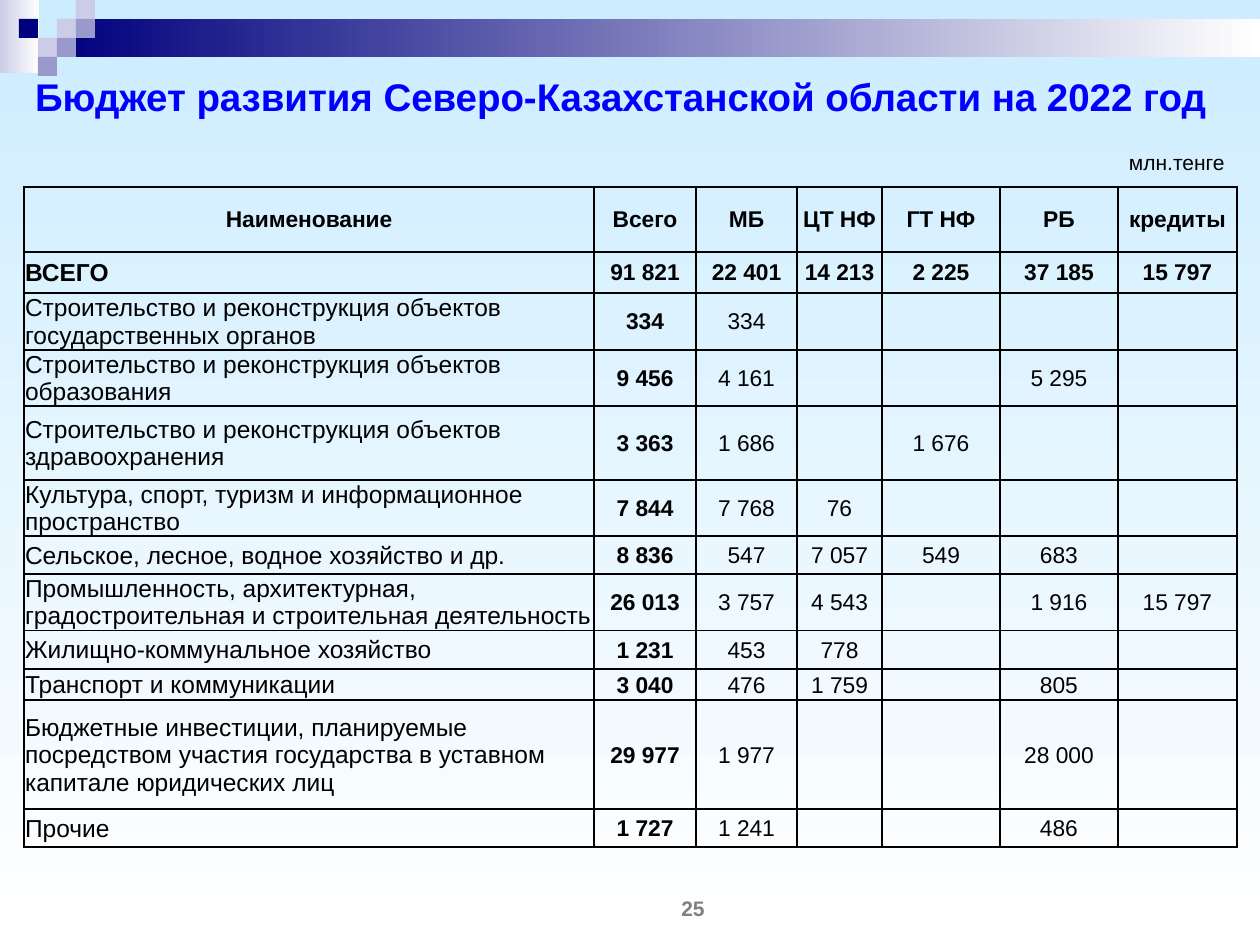
from lxml import etree
from pptx import Presentation
from pptx import util as u
from pptx.dml.color import RGBColor
from pptx.enum import shapes, text
from pptx.oxml import ns

SCALE = 914400 / 126
INK = {
    "sky": "CCECFF", "white": "FFFFFF", "navy": "00007D", "pale": "CCCCE6",
    "mid": "9999CC", "blue": "0000FF", "black": "000000", "gray": "7F7F7F",
}
ALIGN = {"l": text.PP_ALIGN.LEFT, "c": text.PP_ALIGN.CENTER, "r": text.PP_ALIGN.RIGHT}
COLS = [570, 102, 101, 85, 118, 118, 119]
HEAD = ["Наименование", "Всего", "МБ", "ЦТ НФ", "ГТ НФ", "РБ", "кредиты"]
ROWS = [
    (65, HEAD),
    (41, ["ВСЕГО", "91 821", "22 401", "14 213", "2 225", "37 185", "15 797"]),
    (57, ["Строительство и реконструкция объектов государственных органов",
          "334", "334", "", "", "", ""]),
    (56, ["Строительство и реконструкция объектов образования",
          "9 456", "4 161", "", "", "5 295", ""]),
    (74, ["Строительство и реконструкция объектов здравоохранения",
          "3 363", "1 686", "", "1 676", "", ""]),
    (56, ["Культура, спорт, туризм и информационное пространство",
          "7 844", "7 768", "76", "", "", ""]),
    (38, ["Сельское, лесное, водное хозяйство и др.",
          "8 836", "547", "7 057", "549", "683", ""]),
    (56, ["Промышленность, архитектурная, градостроительная и строительная деятельность",
          "26 013", "3 757", "4 543", "", "1 916", "15 797"]),
    (39, ["Жилищно-коммунальное хозяйство", "1 231", "453", "778", "", "", ""]),
    (31, ["Транспорт и коммуникации", "3 040", "476", "1 759", "", "805", ""]),
    (109, ["Бюджетные инвестиции, планируемые посредством участия государства "
           "в уставном капитале юридических лиц",
           "29 977", "1 977", "", "", "28 000", ""]),
    (38, ["Прочие", "1 727", "1 241", "", "", "486", ""]),
]


def px(n):
    return u.Emu(round(n * SCALE))


def rgb(name):
    return RGBColor.from_string(INK[name])


def blend(fill, first, last, angle):
    fill.gradient()
    fill.gradient_angle = angle
    for stop, name in zip(fill.gradient_stops, (first, last)):
        stop.color.rgb = rgb(name)


def write(frame, words, size=12, bold=False, ink="black", align="c"):
    frame.word_wrap = True
    para = frame.paragraphs[0]
    para.alignment = ALIGN[align]
    if not words:
        etree.SubElement(para._p, ns.qn("a:endParaRPr"), sz=str(size * 100))
        return
    run = para.add_run()
    run.text = words
    font = run.font
    font.name, font.size, font.bold = "Arial", u.Pt(size), bold
    font.color.rgb = rgb(ink)


def block(slide, x, y, w, h, ink, fade=None):
    shape = slide.shapes.add_shape(shapes.MSO_SHAPE.RECTANGLE, px(x), px(y), px(w), px(h))
    shape.shadow.inherit = False
    shape.line.fill.background()
    if fade:
        blend(shape.fill, ink, fade, 0)
    else:
        shape.fill.solid()
        shape.fill.fore_color.rgb = rgb(ink)


def banner(slide, x, y, w):
    side = 19
    block(slide, x, y, 39, 73, "pale", "white")
    block(slide, x + 3 * side, y + side, w - 3 * side, 2 * side, "navy", "white")
    tiles = [(3, 1, "pale"), (4, 0, "pale"), (4, 1, "mid"), (2, 2, "pale"),
             (1, 1, "navy"), (3, 2, "mid"), (2, 3, "mid")]
    for col, row, ink in tiles:
        block(slide, x + col * side, y + row * side, side, side, ink)


def title(slide, x, y, w, h):
    shape = slide.shapes.title
    shape.left, shape.top, shape.width, shape.height = px(x), px(y), px(w), px(h)
    shape.text_frame.vertical_anchor = text.MSO_ANCHOR.MIDDLE
    write(shape.text_frame, "Бюджет развития Северо-Казахстанской области на 2022 год",
          size=22, bold=True, ink="blue")


def label(slide, x, y, w, h, words, **style):
    frame = slide.shapes.add_textbox(px(x), px(y), px(w), px(h)).text_frame
    frame.vertical_anchor = text.MSO_ANCHOR.MIDDLE
    write(frame, words, **style)


def border(cell):
    props = cell._tc.get_or_add_tcPr()
    for side in ("lnL", "lnR", "lnT", "lnB"):
        line = etree.SubElement(props, ns.qn("a:" + side), w=str(u.Pt(1)))
        fill = etree.SubElement(line, ns.qn("a:solidFill"))
        etree.SubElement(fill, ns.qn("a:srgbClr"), val=INK["black"])


def budget(slide, x, y):
    high = sum(h for h, _ in ROWS)
    table = slide.shapes.add_table(len(ROWS), len(COLS), px(x), px(y),
                                   px(sum(COLS)), px(high)).table
    table.first_row = table.horz_banding = False
    for col, wide in zip(table.columns, COLS):
        col.width = px(wide)
    for r, (tall, words) in enumerate(ROWS):
        table.rows[r].height = px(tall)
        for c, word in enumerate(words):
            cell = table.cell(r, c)
            cell.margin_left = cell.margin_right = cell.margin_top = px(1)
            cell.margin_bottom = 0
            cell.vertical_anchor = text.MSO_ANCHOR.MIDDLE
            border(cell)
            cell.fill.background()
            name = c == 0 and r > 0
            write(cell.text_frame, word, size=14 if name else 13,
                  bold=r < 2 or c == 1, align="l" if name else "c")


def main():
    deck = Presentation()
    deck.slide_width, deck.slide_height = px(1260), px(945)
    slide = deck.slides.add_slide(deck.slide_layouts[5])
    blend(slide.background.fill, "sky", "white", 270)
    banner(slide, 0, 0, 1260)
    title(slide, 5, 59, 1232, 75)
    budget(slide, 24, 187)
    label(slide, 567, 893, 252, 30, "25", bold=True, ink="gray")
    label(slide, 1063, 147, 174, 30, "млн.тенге", align="r")
    deck.save("out.pptx")


if __name__ == "__main__":
    main()
